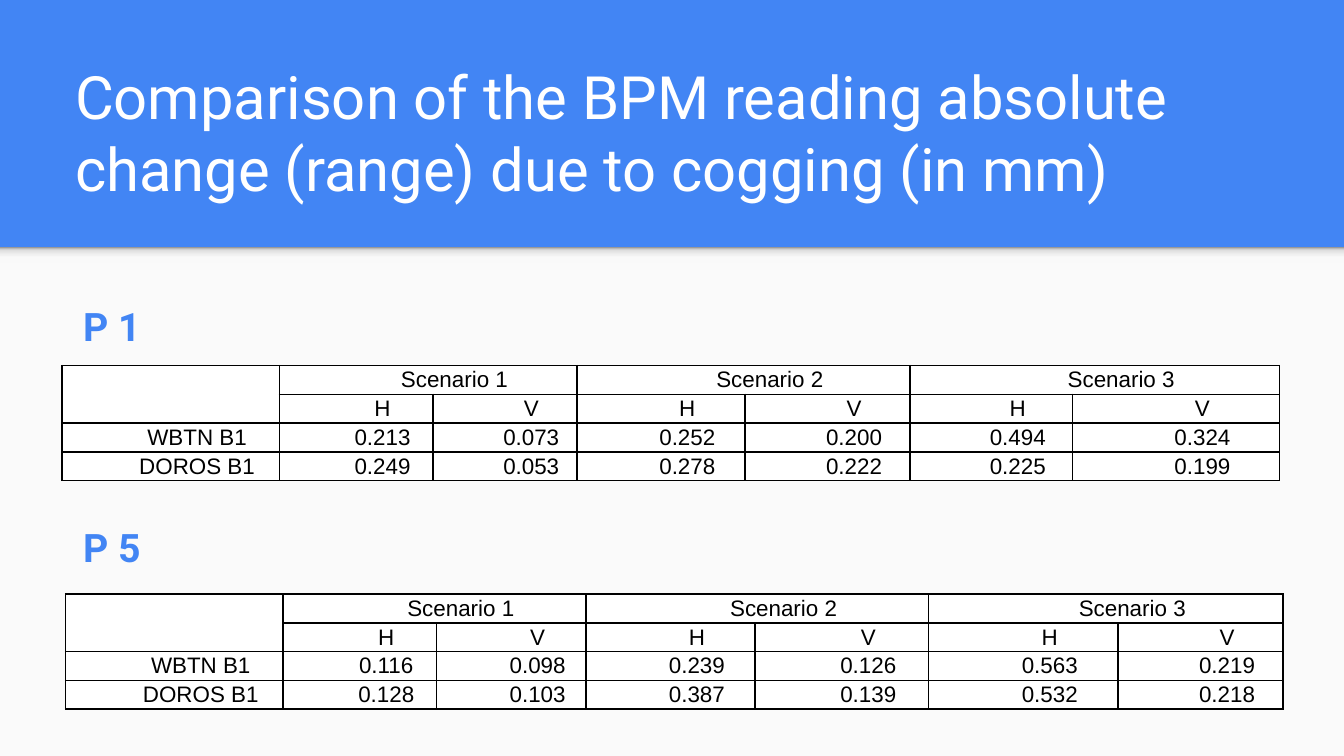
from lxml.etree import SubElement
from pptx import Presentation
from pptx.dml.color import RGBColor
from pptx.enum.shapes import MSO_SHAPE
from pptx.enum.text import MSO_ANCHOR, PP_ALIGN
from pptx.oxml.ns import qn
from pptx.util import Cm, Pt

COLORS = {
    "blue": "4285F4",
    "paper": "FAFAFA",
    "white": "FFFFFF",
    "black": "000000",
}
SHADOW_STOPS = [(0, "F9F9F9"), (36, "F9F9F9"), (80, "DEDEDE"), (100, "999999")]
ROW_HEIGHT = 0.51
SCENARIOS = ["Scenario 1", "Scenario 2", "Scenario 3"]
SECTIONS = [
    {
        "heading": "P 1", "heading_top": 5.33, "left": 1.17, "top": 6.91,
        "widths": [4.11, 2.9, 2.72, 3.18, 3.12, 3.07, 3.91],
        "rows": [
            ["WBTN B1", "0.213", "0.073", "0.252", "0.200", "0.494", "0.324"],
            ["DOROS B1", "0.249", "0.053", "0.278", "0.222", "0.225", "0.199"],
        ],
    },
    {
        "heading": "P 5", "heading_top": 9.5, "left": 1.24, "top": 11.23,
        "widths": [4.11, 2.9, 2.82, 3.2, 3.28, 3.58, 3.12],
        "rows": [
            ["WBTN B1", "0.116", "0.098", "0.239", "0.126", "0.563", "0.219"],
            ["DOROS B1", "0.128", "0.103", "0.387", "0.139", "0.532", "0.218"],
        ],
    },
]


def add_span(para, text, size, font, color, bold=False):
    span = para.add_run()
    span.text = text
    span.font.size = Pt(size)
    span.font.name = font
    span.font.bold = bold
    span.font.color.rgb = RGBColor.from_string(COLORS[color])


def add_box(left, top, width, height, anchor):
    box = page.shapes.add_textbox(Cm(left), Cm(top), Cm(width), Cm(height))
    frame = box.text_frame
    frame.word_wrap = True
    frame.vertical_anchor = anchor
    frame.margin_left = frame.margin_right = Cm(0.25)
    frame.margin_top = frame.margin_bottom = Cm(0.25)
    return frame.paragraphs[0]


deck = Presentation()
deck.slide_width = Cm(25.4)
deck.slide_height = Cm(14.29)
page = deck.slides.add_slide(deck.slide_layouts[6])
page.background.fill.solid()
page.background.fill.fore_color.rgb = RGBColor.from_string(COLORS["blue"])

panel = page.shapes.add_shape(MSO_SHAPE.RECTANGLE, 0, Cm(4.67), Cm(25.4), Cm(9.62))
panel.fill.solid()
panel.fill.fore_color.rgb = RGBColor.from_string(COLORS["paper"])
band = page.shapes.add_shape(MSO_SHAPE.RECTANGLE, 0, Cm(4.67), Cm(25.4), Cm(0.3))
band.fill.gradient()
band.fill.gradient_angle = 90
stop_list = band._element.spPr.find(qn("a:gradFill")).find(qn("a:gsLst"))
for stop in list(stop_list):
    stop_list.remove(stop)
for position, color in SHADOW_STOPS:
    stop = SubElement(stop_list, qn("a:gs"), pos=str(position * 1000))
    SubElement(stop, qn("a:srgbClr"), val=color)
for shape in (panel, band):
    shape.shadow.inherit = False
    shape.line.fill.background()

title = add_box(1.17, 1.96, 22.83, 2.13, MSO_ANCHOR.BOTTOM)
add_span(title, "Comparison of the BPM reading absolute change (range) due to cogging (in mm)",
         32, "Roboto", "white")

for section in SECTIONS:
    heading = add_box(1.32, section["heading_top"], 22.83, 1.32, MSO_ANCHOR.TOP)
    heading.line_spacing = 1.15
    add_span(heading, section["heading"], 21, "Roboto", "blue", True)

    scenario_row = [""]
    for scenario in SCENARIOS:
        scenario_row += [scenario, ""]
    grid = [scenario_row, [""] + ["H", "V"] * len(SCENARIOS)] + section["rows"]
    widths = section["widths"]
    table = page.shapes.add_table(
        len(grid), len(widths), Cm(section["left"]), Cm(section["top"]),
        Cm(sum(widths)), Cm(ROW_HEIGHT * len(grid))).table
    table.first_row = False
    table.horz_banding = False
    for column, width in zip(table.columns, widths):
        column.width = Cm(width)

    for row_index, texts in enumerate(grid):
        table.rows[row_index].height = Cm(ROW_HEIGHT)
        for column_index, text in enumerate(texts):
            cell = table.cell(row_index, column_index)
            cell.margin_left = cell.margin_right = Cm(0.18)
            cell.margin_top = cell.margin_bottom = 0
            for side in ("a:lnL", "a:lnR", "a:lnT", "a:lnB"):
                border = SubElement(cell._tc.get_or_add_tcPr(), qn(side), w=str(Pt(1)))
                paint = SubElement(border, qn("a:solidFill"))
                SubElement(paint, qn("a:srgbClr"), val=COLORS["black"])
            cell.fill.solid()
            cell.fill.fore_color.rgb = RGBColor.from_string(COLORS["white"])
            para = cell.text_frame.paragraphs[0]
            para.alignment = PP_ALIGN.CENTER
            para.line_spacing = 1.07
            para._p.get_or_add_pPr().set("indent", str(Cm(1)))
            if text:
                add_span(para, text, 12, "Arial", "black")
            else:
                SubElement(para._p, qn("a:endParaRPr"), sz="1200")

    table.cell(0, 0).merge(table.cell(1, 0))
    for column_index in range(1, len(widths), 2):
        table.cell(0, column_index).merge(table.cell(0, column_index + 1))

deck.save("out.pptx")
